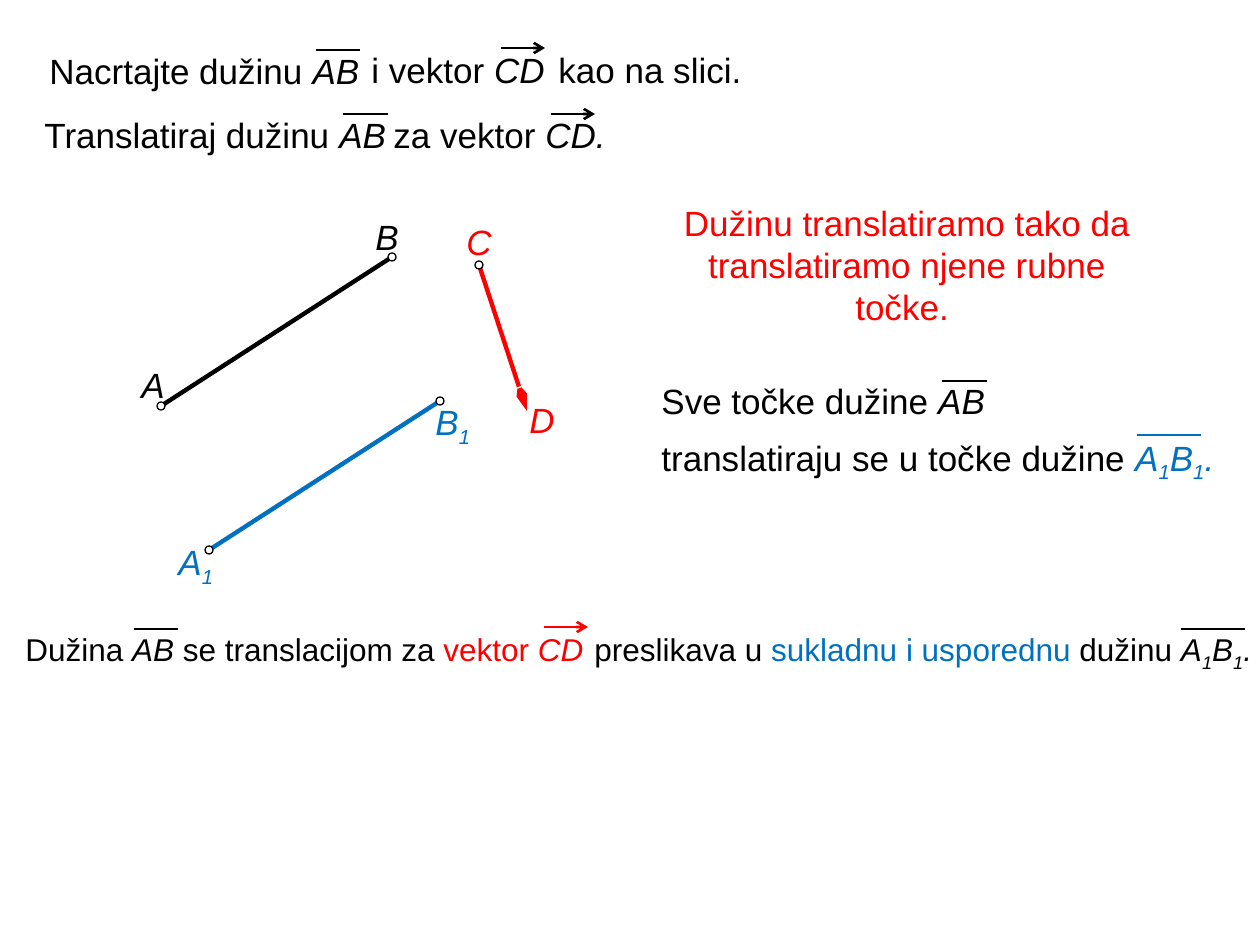
from lxml import etree
from pptx import Presentation
from pptx.dml.color import RGBColor
from pptx.enum.shapes import MSO_CONNECTOR, MSO_SHAPE
from pptx.enum.text import PP_ALIGN
from pptx.oxml.ns import qn
from pptx.util import Inches, Pt

STRAIGHT = MSO_CONNECTOR.STRAIGHT
RECTANGLE = MSO_SHAPE.RECTANGLE
ELLIPSE = MSO_SHAPE.OVAL
LEFT = PP_ALIGN.LEFT
CENTER = PP_ALIGN.CENTER

BLACK = RGBColor(0x00, 0x00, 0x00)
WHITE = RGBColor(0xFF, 0xFF, 0xFF)
RED = RGBColor(0xFF, 0x00, 0x00)
BLUE = RGBColor(0x00, 0x70, 0xC0)

PX_PER_INCH = 126
POINT_SIZE = 8
BOX_HEIGHT = {20: 55, 18: 50}

PLAIN = {"color": BLACK, "italic": False}
MATH = {"color": BLACK, "italic": True}
RED_PLAIN = {"color": RED, "italic": False}
RED_MATH = {"color": RED, "italic": True}
BLUE_PLAIN = {"color": BLUE, "italic": False}
BLUE_MATH = {"color": BLUE, "italic": True}

BAR_HEAD = {"type": "arrow", "w": "med", "len": "med"}
VECTOR_HEAD = {"type": "arrow", "w": "sm", "len": "lg"}

POINT_A, POINT_B = (161, 406), (392, 257)
POINT_C, POINT_D = (479, 265), (527, 411)
SHIFT = (48, 144)
POINT_A1, POINT_B1 = [(x + SHIFT[0], y + SHIFT[1]) for x, y in (POINT_A, POINT_B)]


def px(value):
    return round(Inches(1) * value / PX_PER_INCH)


def indexed(letters, style):
    parts = []
    for letter in letters:
        parts += [(letter, style), ("1", style | {"baseline": -25000})]
    return parts


def write_runs(paragraph, parts, size):
    for text, style in parts:
        run = paragraph.add_run()
        run.text = text
        font_values = {"name": "Arial", "size": Pt(size), "italic": style["italic"]}
        for name, value in font_values.items():
            setattr(run.font, name, value)
        run.font.color.rgb = style["color"]
        if "baseline" in style:
            run.font._element.set("baseline", str(style["baseline"]))


def add_text(slide, left, top, width, parts, size=20):
    box = slide.shapes.add_textbox(px(left), px(top), px(width), px(BOX_HEIGHT[size]))
    box.text_frame.word_wrap = True
    paragraph = box.text_frame.paragraphs[0]
    paragraph.alignment = LEFT
    write_runs(paragraph, parts, size)


def add_line(slide, start, end, color, width, head=None):
    line = slide.shapes.add_connector(STRAIGHT, *map(px, start + end))
    line.line.color.rgb = color
    line.line.width = Pt(width)
    if head:
        etree.SubElement(line.line._get_or_add_ln(), qn("a:tailEnd"), head)
    etree.SubElement(line._element.spPr, qn("a:effectLst"))


def add_bar(slide, left, right, y, color=BLACK, head=None):
    add_line(slide, (left, y), (right, y), color, 1.5, head)


def add_point(slide, center):
    x, y = (value - POINT_SIZE / 2 for value in center)
    point = slide.shapes.add_shape(ELLIPSE, *map(px, (x, y, POINT_SIZE, POINT_SIZE)))
    point.shadow.inherit = False
    point.fill.solid()
    point.fill.fore_color.rgb = WHITE
    point.line.color.rgb = BLACK
    point.line.width = Pt(0.75)


def add_rule(slide, left, top, width, height, text):
    rule = slide.shapes.add_shape(RECTANGLE, *map(px, (left, top, width, height)))
    rule.shadow.inherit = False
    rule.fill.solid()
    rule.fill.fore_color.rgb = WHITE
    rule.line.fill.background()
    frame = rule.text_frame
    frame.word_wrap = True
    frame.vertical_anchor = None
    paragraph = frame.paragraphs[0]
    paragraph.alignment = CENTER
    write_runs(paragraph, [(text, RED_PLAIN)], 20)


def add_construction(slide):
    add_line(slide, POINT_A1, POINT_B1, BLUE, 2.5)
    add_line(slide, POINT_A, POINT_B, BLACK, 2.5)
    add_line(slide, POINT_C, POINT_D, RED, 2.5, VECTOR_HEAD)
    for center in (POINT_A, POINT_B, POINT_C, POINT_B1, POINT_A1):
        add_point(slide, center)
    labels = [
        (129, 357, [("A", MATH)]),
        (363, 209, [("B", MATH)]),
        (454, 214, [("C", RED_MATH)]),
        (517, 392, [("D", RED_MATH)]),
        (423, 394, indexed("B", BLUE_MATH)),
        (166, 534, indexed("A", BLUE_MATH)),
    ]
    for left, top, parts in labels:
        add_text(slide, left, top, 72, parts)


def add_task(slide):
    add_text(slide, 37, 43, 367, [("Nacrtajte dužinu ", PLAIN), ("AB", MATH)])
    add_bar(slide, 316, 360, 50)
    add_text(slide, 359, 42, 219, [("i vektor ", PLAIN), ("CD", MATH)])
    add_bar(slide, 501, 545, 48, head=BAR_HEAD)
    add_text(slide, 546, 42, 242, [("kao na slici.", PLAIN)])
    add_text(slide, 32, 107, 412, [("Translatiraj dužinu ", PLAIN), ("AB", MATH)])
    add_bar(slide, 343, 388, 114)
    add_text(slide, 381, 107, 242, [("za vektor ", PLAIN), ("CD.", MATH)])
    add_bar(slide, 551, 595, 114, head=BAR_HEAD)


def add_explanation(slide):
    add_rule(slide, 655, 195, 504, 149,
             "Dužinu translatiramo tako da translatiramo njene rubne točke. ")
    add_text(slide, 649, 373, 436, [("Sve točke dužine ", PLAIN), ("AB", MATH)])
    add_bar(slide, 942, 987, 381)
    add_text(slide, 649, 430, 611,
             [("translatiraju se u točke dužine ", PLAIN),
              *indexed("AB", BLUE_MATH), (".", BLUE_MATH)])
    add_bar(slide, 1137, 1201, 435, BLUE)


def add_conclusion(slide):
    phrases = [
        (13, 610, [("Dužina ", PLAIN), ("AB ", MATH), ("se translacijom", PLAIN)]),
        (389, 242, [("za ", PLAIN), ("vektor ", RED_PLAIN), ("CD", RED_MATH)]),
        (582, 610, [("preslikava u ", PLAIN), ("sukladnu i usporednu", BLUE_PLAIN)]),
        (1067, 210, [("dužinu ", PLAIN), *indexed("AB", MATH), (".", MATH)]),
    ]
    for left, width, parts in phrases:
        add_text(slide, left, 624, width, parts, 18)
    add_bar(slide, 134, 178, 629)
    add_bar(slide, 544, 588, 627, RED, BAR_HEAD)
    add_bar(slide, 1181, 1245, 629)


def main():
    presentation = Presentation()
    presentation.slide_width = px(1260)
    presentation.slide_height = px(945)
    slide = presentation.slides.add_slide(presentation.slide_layouts[6])
    add_construction(slide)
    add_task(slide)
    add_explanation(slide)
    add_conclusion(slide)
    presentation.save("out.pptx")


if __name__ == "__main__":
    main()
